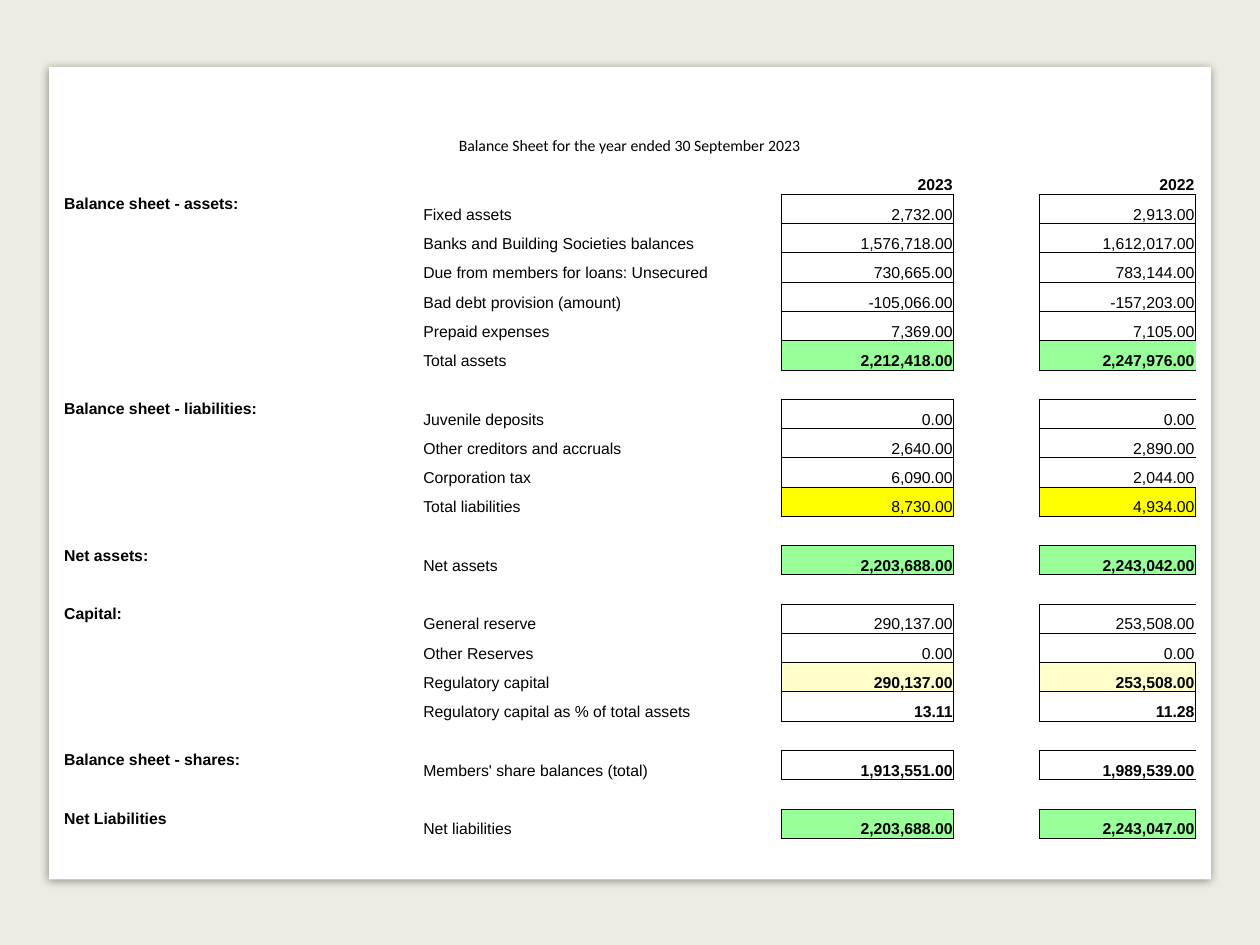
from lxml import etree
from pptx import Presentation
from pptx.dml.color import RGBColor
from pptx.enum.shapes import MSO_SHAPE
from pptx.enum.text import MSO_ANCHOR, PP_ALIGN
from pptx.oxml import parse_xml
from pptx.oxml.ns import nsdecls, qn
from pptx.util import Inches, Pt

RECTANGLE = MSO_SHAPE.RECTANGLE
TOP, BOTTOM = MSO_ANCHOR.TOP, MSO_ANCHOR.BOTTOM
LEFT, CENTER, RIGHT = PP_ALIGN.LEFT, PP_ALIGN.CENTER, PP_ALIGN.RIGHT

SLIDE_WIDTH, SLIDE_HEIGHT = 10, 7.5
BEIGE, WHITE, BLACK = "EEECE1", "FFFFFF", "000000"
GREEN, YELLOW, CREAM = "99FF99", "FFFF00", "FFFFCC"
FONT_SIZE = 9
NO_GRID_STYLE = "{2D5ABB26-0587-4C30-8999-92F81FD0307C}"

TITLE = "Balance Sheet for the year ended 30 September 2023"
YEARS = {2: "2023", 4: "2022"}
COLUMN_WIDTHS = [2.85, 2.85, 1.37, 0.68, 1.24]
TITLE_HEIGHT, TABLE_HEIGHT = 0.24, 5.59
CLOSED, OPEN_LAST, OPEN_BOTH = (), (4,), (2, 4)

# label, 2023, 2022, fill, bold, columns without a right border
SECTIONS = [
    ("Balance sheet - assets:", [
        ("Fixed assets", "2,732.00", "2,913.00", None, False, CLOSED),
        ("Banks and Building Societies balances", "1,576,718.00", "1,612,017.00", None, False, CLOSED),
        ("Due from members for loans: Unsecured", "730,665.00", "783,144.00", None, False, CLOSED),
        ("Bad debt provision (amount)", "-105,066.00", "-157,203.00", None, False, CLOSED),
        ("Prepaid expenses", "7,369.00", "7,105.00", None, False, CLOSED),
        ("Total assets", "2,212,418.00", "2,247,976.00", GREEN, True, OPEN_BOTH),
    ]),
    ("Balance sheet - liabilities:", [
        ("Juvenile deposits", "0.00", "0.00", None, False, OPEN_LAST),
        ("Other creditors and accruals", "2,640.00", "2,890.00", None, False, OPEN_LAST),
        ("Corporation tax", "6,090.00", "2,044.00", None, False, OPEN_LAST),
        ("Total liabilities", "8,730.00", "4,934.00", YELLOW, False, CLOSED),
    ]),
    ("Net assets:", [
        ("Net assets", "2,203,688.00", "2,243,042.00", GREEN, True, CLOSED),
    ]),
    ("Capital:", [
        ("General reserve", "290,137.00", "253,508.00", None, False, OPEN_LAST),
        ("Other Reserves", "0.00", "0.00", None, False, OPEN_BOTH),
        ("Regulatory capital", "290,137.00", "253,508.00", CREAM, True, CLOSED),
        ("Regulatory capital as % of total assets", "13.11", "11.28", None, True, CLOSED),
    ]),
    ("Balance sheet - shares:", [
        ("Members' share balances (total)", "1,913,551.00", "1,989,539.00", WHITE, True, OPEN_LAST),
    ]),
    ("Net Liabilities", [
        ("Net liabilities", "2,203,688.00", "2,243,047.00", GREEN, True, CLOSED),
    ]),
]
ROW_COUNT = 1 + sum(len(lines) + 1 for _, lines in SECTIONS)


def color(value):
    return RGBColor.from_string(value)


def add_panel(slide, left, top, width, height, fill):
    shape = slide.shapes.add_shape(
        RECTANGLE, Inches(left), Inches(top), Inches(width), Inches(height))
    shape.shadow.inherit = False
    shape.fill.solid()
    shape.fill.fore_color.rgb = color(fill)
    shape.line.fill.background()
    return shape


def add_shadow(shape):
    effects = shape._element.spPr.find(qn("a:effectLst"))
    effects.append(parse_xml(
        f'<a:outerShdw {nsdecls("a")} blurRad="{Pt(5)}" dist="{Pt(1.4)}" dir="5400000" '
        f'algn="t" rotWithShape="0"><a:srgbClr val="{BLACK}"><a:alpha val="43000"/>'
        '</a:srgbClr></a:outerShdw>'))


def write(cell, text, align=LEFT, anchor=BOTTOM, bold=False, font_name="Arial"):
    cell.text = text
    cell.vertical_anchor = anchor
    paragraph = cell.text_frame.paragraphs[0]
    paragraph.alignment = align
    font = paragraph.font
    font.name, font.size, font.bold = font_name, Pt(FONT_SIZE), bold
    font.color.rgb = color(BLACK)


def box_edges(row, column, is_open):
    edges = {(row, column, "L"), (row, column - 1, "R"),
             (row, column, "T"), (row - 1, column, "B"),
             (row, column, "B"), (row + 1, column, "T")}
    if not is_open:
        edges |= {(row, column, "R"), (row, column + 1, "L")}
    return edges


def draw_borders(cell, sides):
    properties = cell._tc.get_or_add_tcPr()
    for side in sides:
        line = etree.SubElement(properties, qn(f"a:ln{side}"), w=str(Pt(0.5)))
        solid = etree.SubElement(line, qn("a:solidFill"))
        etree.SubElement(solid, qn("a:srgbClr"), val=BLACK)


def fill_table(table):
    edges, fills = set(), {}
    write(table.cell(0, 0), TITLE, CENTER, TOP, font_name="Calibri")
    table.cell(0, 0).merge(table.cell(0, len(COLUMN_WIDTHS) - 1))
    for column, year in YEARS.items():
        write(table.cell(1, column), year, RIGHT, bold=True)

    row = 2
    for heading, lines in SECTIONS:
        write(table.cell(row, 0), heading, anchor=TOP, bold=True)
        if len(lines) > 1:
            table.cell(row, 0).merge(table.cell(row + len(lines) - 1, 0))
        for label, current, previous, fill, bold, open_columns in lines:
            write(table.cell(row, 1), label)
            for column, value in zip(YEARS, (current, previous)):
                write(table.cell(row, column), value, RIGHT, bold=bold)
                edges |= box_edges(row, column, column in open_columns)
                fills[row, column] = fill
            row += 1
        row += 1
    return edges, fills


def format_cells(table, edges, fills):
    for row in range(ROW_COUNT):
        for column in range(len(COLUMN_WIDTHS)):
            cell = table.cell(row, column)
            cell.margin_left = cell.margin_right = cell.margin_top = Inches(0.01)
            cell.margin_bottom = 0
            if not cell.text:
                paragraph = cell.text_frame.paragraphs[0]
                paragraph._p.get_or_add_endParaRPr().set("sz", str(FONT_SIZE * 100))
            draw_borders(cell, [side for side in "LRTB" if (row, column, side) in edges])
            fill = fills.get((row, column))
            if fill:
                cell.fill.solid()
                cell.fill.fore_color.rgb = color(fill)
            else:
                cell.fill.background()


def add_balance_sheet(slide):
    frame = slide.shapes.add_table(
        ROW_COUNT, len(COLUMN_WIDTHS), Inches(0.5), Inches(1.07),
        Inches(sum(COLUMN_WIDTHS)), Inches(TABLE_HEIGHT))
    table = frame.table
    table.first_row = table.horz_banding = False
    table._tbl.tblPr.find(qn("a:tableStyleId")).text = NO_GRID_STYLE
    for column, width in zip(table.columns, COLUMN_WIDTHS):
        column.width = Inches(width)
    for row in table.rows:
        row.height = Inches((TABLE_HEIGHT - TITLE_HEIGHT) / (ROW_COUNT - 1))
    table.rows[0].height = Inches(TITLE_HEIGHT)
    edges, fills = fill_table(table)
    format_cells(table, edges, fills)


def main():
    presentation = Presentation()
    presentation.slide_width = Inches(SLIDE_WIDTH)
    presentation.slide_height = Inches(SLIDE_HEIGHT)
    slide = presentation.slides.add_slide(presentation.slide_layouts[6])
    add_panel(slide, 0, 0, SLIDE_WIDTH, SLIDE_HEIGHT, BEIGE)
    add_shadow(add_panel(slide, 0.39, 0.53, 9.22, 6.45, WHITE))
    add_balance_sheet(slide)
    presentation.save("out.pptx")


if __name__ == "__main__":
    main()
